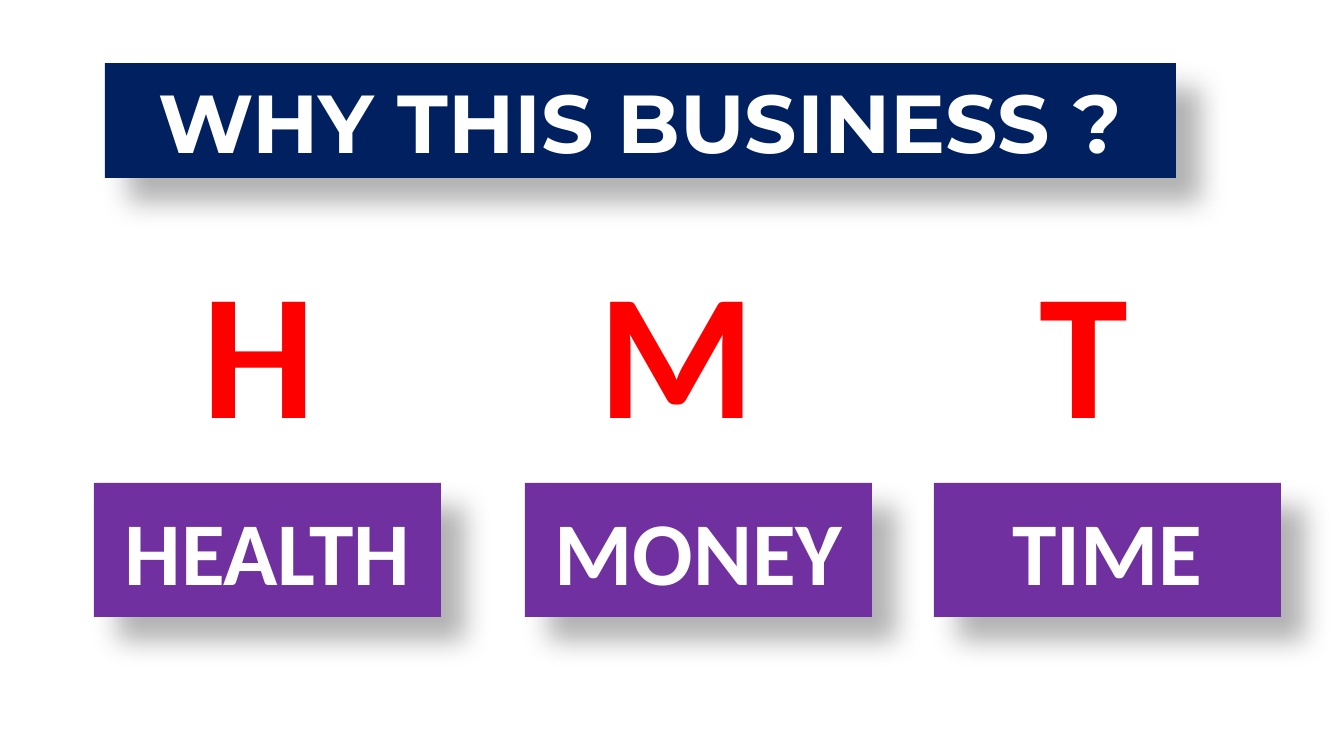
from pptx import Presentation, util as u
from pptx.dml.color import RGBColor
from pptx.enum import shapes, text
from pptx.oxml import parse_xml
from pptx.oxml.ns import nsdecls

SLIDE_WIDTH, SLIDE_HEIGHT = 1344, 756
SCALE = u.Inches(10) / SLIDE_WIDTH

NAVY = RGBColor(0x00, 0x20, 0x60)
PURPLE = RGBColor(0x70, 0x30, 0xA0)
RED = RGBColor(0xFF, 0x00, 0x00)
WHITE = RGBColor(0xFF, 0xFF, 0xFF)


def px(*lengths):
    return [round(length * SCALE) for length in lengths]


def write_text(shape, words, size, color, font="Calibri", tabs=()):
    """Write one bold line; tabs are centre stops in px, replacing centring."""
    frame = shape.text_frame
    frame.word_wrap = True
    frame.vertical_anchor = text.MSO_ANCHOR.MIDDLE
    paragraph = frame.paragraphs[0]
    paragraph.alignment = text.PP_ALIGN.LEFT if tabs else text.PP_ALIGN.CENTER
    if tabs:
        stops = "".join(f'<a:tab pos="{stop}" algn="ctr"/>' for stop in px(*tabs))
        properties = paragraph._p.get_or_add_pPr()
        properties.append(parse_xml(f'<a:tabLst {nsdecls("a")}>{stops}</a:tabLst>'))
    run = paragraph.add_run()
    run.text = words
    run.font.name = font
    run.font.size = u.Pt(size)
    run.font.bold = True
    run.font.color.rgb = color


def add_shadow(shape):
    shape.shadow.inherit = False
    effects = shape._element.spPr.find("{*}effectLst")
    effects.append(parse_xml(
        f'<a:outerShdw {nsdecls("a")} blurRad="{u.Pt(15)}" dist="{u.Pt(18)}"'
        f' dir="{45 * 60000}" algn="tl" rotWithShape="0">'
        '<a:srgbClr val="000000"><a:alpha val="30000"/></a:srgbClr></a:outerShdw>'))


def add_banner(slide, box, words, fill, size, font="Calibri"):
    banner = slide.shapes.add_shape(shapes.MSO_SHAPE.RECTANGLE, *px(*box))
    banner.fill.solid()
    banner.fill.fore_color.rgb = fill
    banner.line.fill.background()
    add_shadow(banner)
    write_text(banner, words, size, WHITE, font)


def add_initials(slide, box, letters, centers):
    initials = slide.shapes.add_textbox(*px(*box))
    frame = initials.text_frame
    frame.margin_left = frame.margin_right = 0
    line = "".join("\t" + letter for letter in letters)
    write_text(initials, line, 96, RED, tabs=centers)


def add_reasons(slide, box, words, lefts, width):
    left, top, _, height = box
    for word, offset in zip(words, lefts):
        add_banner(slide, (left + offset, top, width, height), word, PURPLE, 48)


def main():
    presentation = Presentation()
    presentation.slide_width, presentation.slide_height = px(SLIDE_WIDTH, SLIDE_HEIGHT)
    slide = presentation.slides.add_slide(presentation.slide_layouts[6])

    reasons = ["HEALTH", "MONEY", "TIME"]

    # Initials of the reasons
    add_initials(slide, (94, 284, 1142, 126), [word[0] for word in reasons],
                 centers=(165, 583, 990))

    # Heading
    add_banner(slide, (105, 63, 1071, 115), "WHY THIS BUSINESS ?", NAVY, 44, "Montserrat")

    # Reasons
    add_reasons(slide, (94, 483, 1187, 134), reasons, lefts=(0, 431, 840), width=347)

    presentation.save("out.pptx")


if __name__ == "__main__":
    main()
